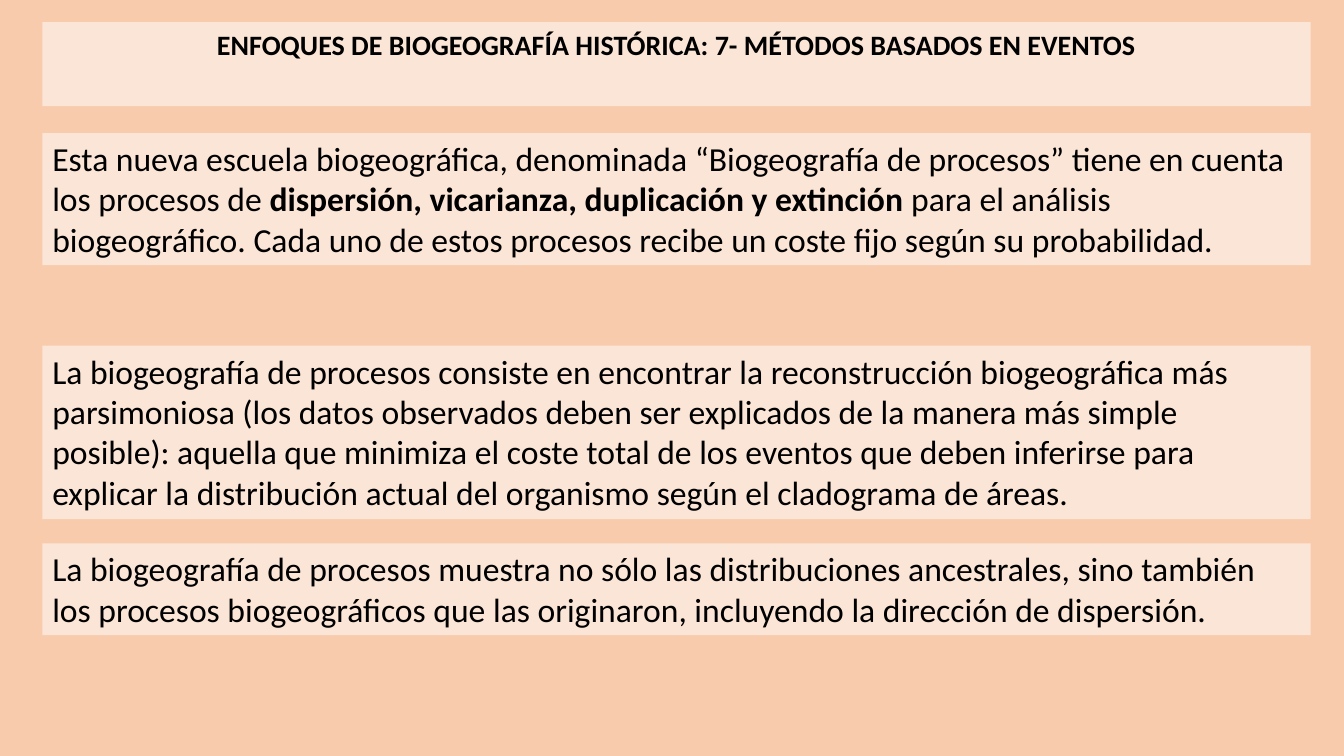
from dataclasses import dataclass

from pptx import Presentation
from pptx.dml.color import RGBColor
from pptx.enum.text import MSO_ANCHOR, MSO_AUTO_SIZE, PP_ALIGN
from pptx.util import Inches, Pt


@dataclass(frozen=True)
class Theme:
    font: str = "Calibri"
    background: RGBColor = RGBColor(0xF8, 0xCB, 0xAD)
    panel: RGBColor = RGBColor(0xFB, 0xE5, 0xD6)
    text: RGBColor = RGBColor(0, 0, 0)
    title_size: Pt = Pt(20)
    body_size: Pt = Pt(24)


THEME = Theme()
PANEL_LEFT, PANEL_WIDTH = Inches(0.42), Inches(12.58)

TITLE = "ENFOQUES DE BIOGEOGRAFÍA HISTÓRICA: 7- MÉTODOS BASADOS EN EVENTOS"

# Each panel: top, height, and its spans as (text, bold)
PANELS = [
    (1.32, 1.31, [
        ("Esta nueva escuela biogeográfica, denominada “Biogeografía de "
         "procesos” tiene en cuenta los procesos de ", False),
        ("dispersión, vicarianza, duplicación y extinción", True),
        (" para el análisis biogeográfico. Cada uno de estos procesos recibe "
         "un coste fijo según su probabilidad.", False),
    ]),
    (3.43, 1.72, [
        ("La biogeografía de procesos consiste en encontrar la reconstrucción "
         "biogeográfica más parsimoniosa (los datos observados deben ser "
         "explicados de la manera más simple posible): aquella que minimiza "
         "el coste total de los eventos que deben inferirse para explicar la "
         "distribución actual del organismo según el cladograma de áreas.", False),
    ]),
    (5.39, 0.91, [
        ("La biogeografía de procesos muestra no sólo las distribuciones "
         "ancestrales, sino también los procesos biogeográficos que las "
         "originaron, incluyendo la dirección de dispersión.", False),
    ]),
]


def fill_panel(box, spans, size, align):
    """Colour a box and write its single paragraph span by span."""
    box.fill.solid()
    box.fill.fore_color.rgb = THEME.panel
    frame = box.text_frame
    frame.word_wrap = True
    frame.auto_size = MSO_AUTO_SIZE.SHAPE_TO_FIT_TEXT
    frame.vertical_anchor = MSO_ANCHOR.TOP
    para = frame.paragraphs[0]
    para.alignment = align
    for text, bold in spans:
        span = para.add_run()
        span.text = text
        span.font.name = THEME.font
        span.font.size = size
        span.font.bold = bold
        span.font.color.rgb = THEME.text


def place_title(page, text):
    title = page.shapes.title
    title.left, title.top = PANEL_LEFT, Inches(0.22)
    title.width, title.height = PANEL_WIDTH, Inches(0.44)
    fill_panel(title, [(text, True)], THEME.title_size, PP_ALIGN.CENTER)


def add_panel(page, top, height, spans):
    box = page.shapes.add_textbox(PANEL_LEFT, Inches(top), PANEL_WIDTH, Inches(height))
    fill_panel(box, spans, THEME.body_size, PP_ALIGN.LEFT)


def main():
    deck = Presentation()
    deck.slide_width, deck.slide_height = Inches(13.33), Inches(7.5)

    # Title Only layout on a plain background
    page = deck.slides.add_slide(deck.slide_layouts[5])
    page.background.fill.solid()
    page.background.fill.fore_color.rgb = THEME.background

    # Heading and explanatory panels
    place_title(page, TITLE)
    for top, height, spans in PANELS:
        add_panel(page, top, height, spans)

    deck.save("out.pptx")


if __name__ == "__main__":
    main()
